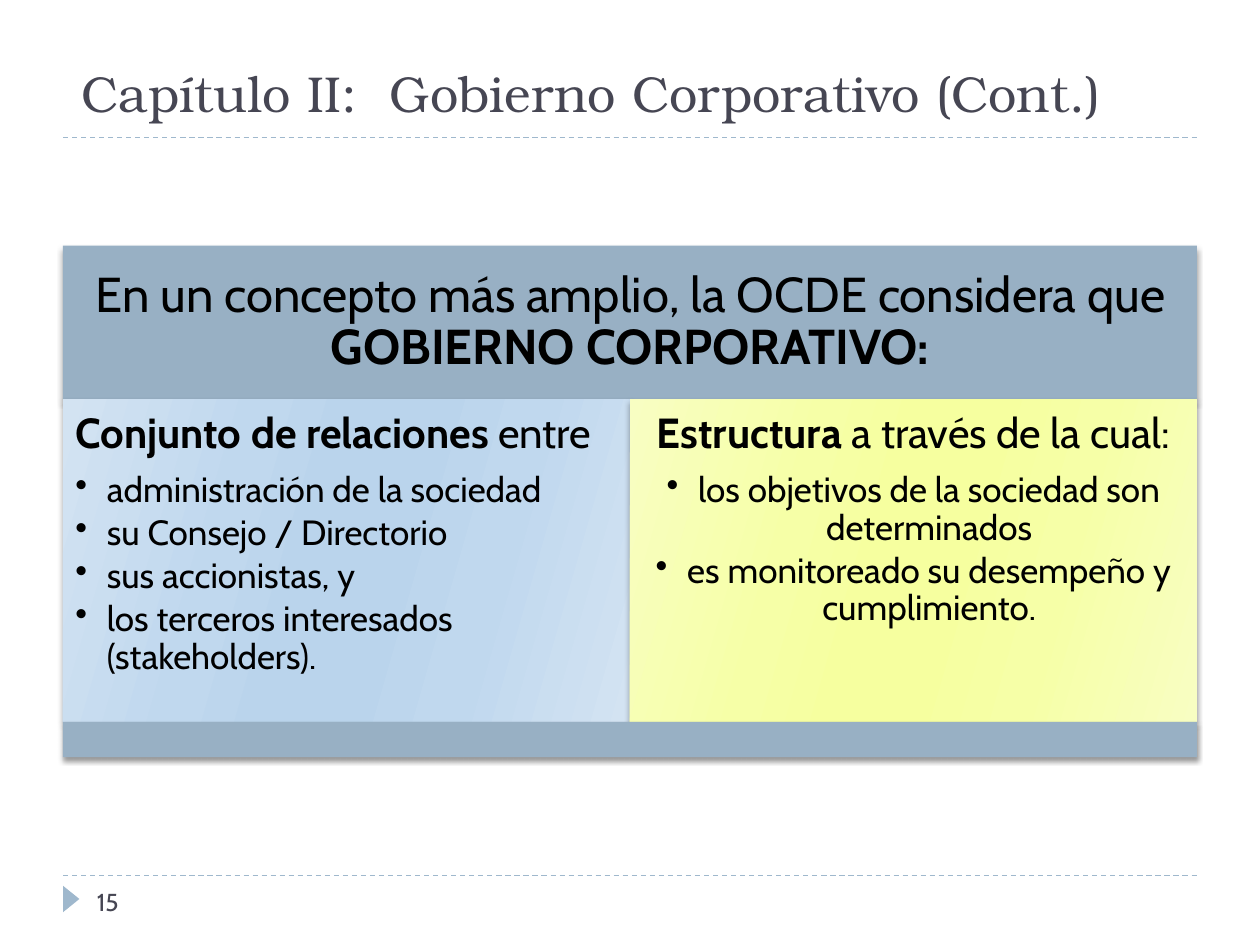
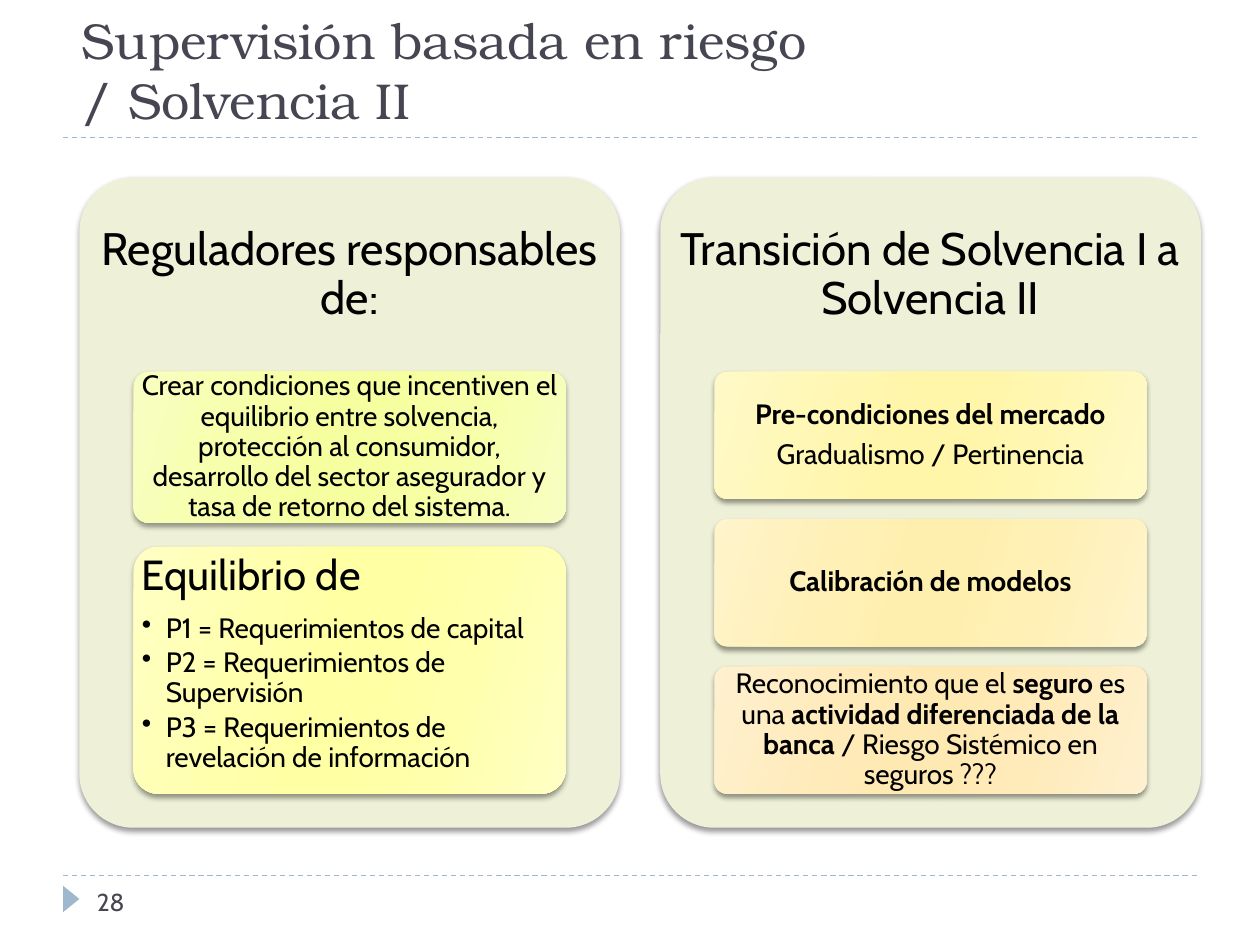
from pptx import Presentation
from pptx.dml.color import RGBColor
from pptx.enum.dml import MSO_LINE
from pptx.enum.shapes import MSO_CONNECTOR, MSO_SHAPE as Form
from pptx.enum.text import MSO_ANCHOR as Anchor, PP_ALIGN as Align
from pptx.oxml import parse_xml
from pptx.oxml.ns import nsdecls, qn
from pptx.util import Pt
from lxml.etree import SubElement

PX = 9144  # EMU in one px, 100 px to the inch

# Colours
INK = RGBColor(0x46, 0x46, 0x53)
BLACK = RGBColor(0, 0, 0)
RULE = RGBColor(0x9F, 0xB8, 0xCD)
STEEL = RGBColor(0x98, 0xB0, 0xC4)
PANEL = RGBColor(0xEE, 0xF1, 0xD7)

# Gradients: edge, between and middle colour
BLUE = [RGBColor(0xD3, 0xE3, 0xF2), RGBColor(0xC0, 0xD8, 0xEE), RGBColor(0xBA, 0xD4, 0xEC)]
LIME = [RGBColor(0xF8, 0xFE, 0xC2), RGBColor(0xF6, 0xFF, 0xA7), RGBColor(0xF6, 0xFF, 0x9F)]
LEMON = [RGBColor(0xFF, 0xFF, 0xC5), RGBColor(0xFF, 0xFF, 0xAC), RGBColor(0xFF, 0xFF, 0xA4)]
CREAM = [RGBColor(0xFF, 0xF9, 0xC8), RGBColor(0xFF, 0xF7, 0xB1), RGBColor(0xFF, 0xF6, 0xA9)]
SAND = [RGBColor(0xFF, 0xF4, 0xCB), RGBColor(0xFF, 0xF0, 0xB5), RGBColor(0xFF, 0xEF, 0xAE)]
PEACH = [RGBColor(0xFF, 0xF0, 0xCF), RGBColor(0xFF, 0xEB, 0xBA), RGBColor(0xFF, 0xE9, 0xB3)]
STOPS = [(0, 0), (30, 1), (45, 2), (55, 2), (73, 1), (100, 0)]

HEAD, BODY = "TeX Gyre Bonum", "Cabin"


def write(frame, text, size=16, font=BODY, color=BLACK, align=Align.CENTER,
          line=0.9, after=0.35, dent=0):
    """Add one paragraph; **marks** make bold, a dent makes a bullet."""
    para = frame.paragraphs[0]
    if para.runs:
        para = frame.add_paragraph()
    para.alignment = align
    para.line_spacing = line
    para.space_after = Pt(round(size * after, 1))
    if dent:
        props = para._p.get_or_add_pPr()
        props.set("marL", str(dent * PX))
        props.set("indent", str(-dent * PX))
        SubElement(props, qn("a:buChar")).set("char", "•")
    for row, part in enumerate(text.split("\n")):
        if row:
            para.add_line_break()
        for turn, words in enumerate(part.split("**")):
            if words:
                run = para.add_run()
                run.text = words
                run.font.name, run.font.size = font, Pt(size)
                run.font.bold = turn % 2 == 1
                run.font.color.rgb = color


class Deck:
    def __init__(self):
        self.prs = Presentation()
        self.prs.slide_width, self.prs.slide_height = 1000 * PX, 750 * PX

    def page(self, title, num, width, low):
        """Start a slide with its rules, title and page number."""
        self.slide = self.prs.slides.add_slide(self.prs.slide_layouts[6])
        for y in (695, 109):
            self.rule(50, y, 950)
        mark = self.shape(Form.ISOSCELES_TRIANGLE, 46, 707, 21, 13, RULE)
        mark.rotation = 90
        look = dict(color=INK, align=Align.LEFT, line=1, after=0)
        write(self.text(55, 0, width, low, Anchor.BOTTOM), title, size=28.8, font=HEAD, **look)
        write(self.text(67, 699, 217, 40), num, size=14, **look)

    def rule(self, x, y, end):
        line = self.slide.shapes.add_connector(
            MSO_CONNECTOR.STRAIGHT, x * PX, y * PX, end * PX, y * PX)
        line.line.color.rgb, line.line.width = RULE, Pt(0.75)
        line.line.dash_style = MSO_LINE.DASH
        SubElement(line._element.spPr, qn("a:effectLst"))

    def shape(self, form, x, y, w, h, fill):
        item = self.slide.shapes.add_shape(form, x * PX, y * PX, w * PX, h * PX)
        item.shadow.inherit = False
        item.line.fill.background()
        if isinstance(fill, RGBColor):
            item.fill.solid()
            item.fill.fore_color.rgb = fill
        else:
            self.blend(item, fill)
        return item

    def blend(self, item, tones):
        item.fill.gradient()
        stops = "".join(f'<a:gs pos="{at * 1000}"><a:srgbClr val="{tones[tone]}"/></a:gs>'
                        for at, tone in STOPS)
        grad = item._element.spPr.find(qn("a:gradFill"))
        grad.getparent().replace(grad, parse_xml(
            f'<a:gradFill {nsdecls("a")} rotWithShape="1"><a:gsLst>{stops}</a:gsLst>'
            '<a:lin ang="960000" scaled="0"/></a:gradFill>'))

    def card(self, x, y, w, h, fill, pad=(0, 0), anchor=Anchor.MIDDLE, curve=False):
        """Draw a shaded box and return its text frame."""
        item = self.shape(Form.ROUNDED_RECTANGLE if curve else Form.RECTANGLE, x, y, w, h, fill)
        inset = 0
        if curve:
            item.adjustments[0] = 0.1
            inset = round(0.029 * min(w, h))  # the corner already insets the text
        item._element.spPr.find(qn("a:effectLst")).append(parse_xml(
            f'<a:outerShdw {nsdecls("a")} blurRad="38100" dist="25400" dir="5400000" '
            'rotWithShape="0"><a:srgbClr val="000000"><a:alpha val="40000"/>'
            '</a:srgbClr></a:outerShdw>'))
        return self.frame(item, anchor, [max(0, p - inset) for p in pad])

    def text(self, x, y, w, h, anchor=Anchor.TOP, pad=(10, 5)):
        box = self.slide.shapes.add_textbox(x * PX, y * PX, w * PX, h * PX)
        return self.frame(box, anchor, pad)

    def frame(self, item, anchor, pad):
        frame = item.text_frame
        frame.word_wrap, frame.vertical_anchor = True, anchor
        frame.margin_left = frame.margin_right = pad[0] * PX
        frame.margin_top = frame.margin_bottom = pad[1] * PX
        return frame

    def points(self, frame, head, items, size, dent, align=Align.LEFT):
        write(frame, head, size=24, align=align)
        for item in items:
            write(frame, item, size=size, align=align, after=0.15, dent=dent)


def main():
    deck = Deck()

    # Corporate governance: a band over two halves and a foot
    deck.page("Capítulo II:  Gobierno Corporativo (Cont.)", "15", 900, 102)
    band = deck.card(50, 195, 900, 122, STEEL, (12, 12))
    write(band, "En un concepto más amplio, la OCDE considera que **GOBIERNO CORPORATIVO:**", size=28)
    halves = [
        (BLUE, Align.LEFT, "**Conjunto de relaciones** entre",
         ["administración de la sociedad", "su Consejo / Directorio",
          "sus accionistas, y", "los terceros interesados (stakeholders)."]),
        (LIME, Align.CENTER, "**Estructura** a través de la cual:",
         ["los objetivos de la sociedad son determinados",
          "es monitoreado su desempeño y cumplimiento."]),
    ]
    for col, (fill, align, head, items) in enumerate(halves):
        half = deck.card(50 + 450 * col, 317, 450, 256, fill, (10, 10), Anchor.TOP)
        deck.points(half, head, items, 20, 25, align)
    deck.card(50, 573, 900, 28, STEEL)

    # Risk-based supervision: two panels of cards
    deck.page("Supervisión basada en riesgo\n/ Solvencia II", "28", 898, 108)
    heads = ["Reguladores responsables de:", "Transición de Solvencia I a Solvencia II"]
    for col, head in enumerate(heads):
        x = 63 + 461 * col
        deck.card(x, 141, 429, 516, PANEL, curve=True)
        write(deck.text(x, 141, 429, 155, Anchor.MIDDLE, (11, 11)), head, size=26)

    # Left cards
    goal = deck.card(106, 295, 343, 120, LIME, (4, 3), curve=True)
    write(goal, "Crear condiciones que incentiven el equilibrio entre solvencia, protección al "
                "consumidor, desarrollo del sector asegurador y tasa de retorno del sistema.")
    poise = deck.card(106, 434, 343, 196, LEMON, (7, 5), Anchor.TOP, curve=True)
    deck.points(poise, "Equilibrio de",
                ["P1 = Requerimientos de capital", "P2 = Requerimientos de Supervisión",
                 "P3 = Requerimientos de revelación de información"], 16, 19)

    # Right cards
    steps = [
        (CREAM, ["**Pre-condiciones del mercado**", "Gradualismo / Pertinencia"]),
        (SAND, ["**Calibración de modelos**"]),
        (PEACH, ["Reconocimiento que el **seguro** es una **actividad diferenciada de la banca** "
                 "/ Riesgo Sistémico en seguros ???"]),
    ]
    for row, (fill, lines) in enumerate(steps):
        step = deck.card(567, 295 + 117 * row, 343, 101, fill, (4, 3), curve=True)
        for line in lines:
            write(step, line)

    deck.prs.save("out.pptx")


if __name__ == "__main__":
    main()
